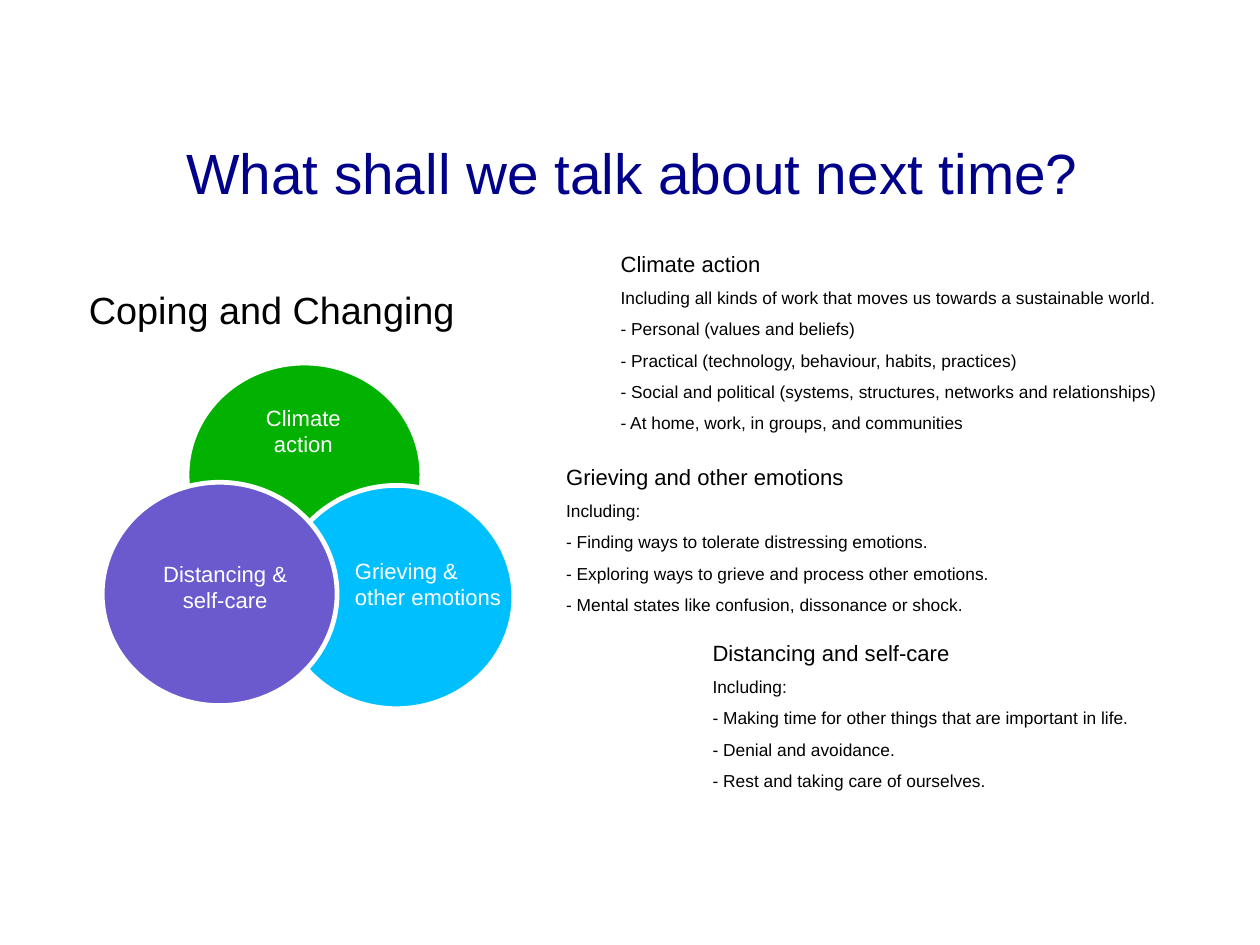
from pptx import Presentation
from pptx.dml.color import RGBColor as Rgb
from pptx.enum.shapes import MSO_SHAPE as Kind
from pptx.enum.text import PP_ALIGN as Align
from pptx.util import Cm, Pt

HUES = {"green": "03B200", "sky": "00BFFF", "violet": "6A5ACD",
        "white": "FFFFFF", "black": "000000", "navy": "00008B"}
FONT = "Arial"
HEAD, BODY = 14, 11
DISC = (5.26, 5.0)

# Discs from back to front: left, top, colour
DISCS = [(4.19, 8.13, "green"), (6.25, 10.87, "sky"), (2.29, 10.8, "violet")]

# Disc labels: text, box, alignment
LABELS = [
    ("Climate action", (5.36, 9.09, 2.84, 1.32), Align.CENTER),
    ("Grieving & other emotions", (7.92, 12.52, 3.51, 1.27), Align.LEFT),
    ("Distancing & self-care", (3.15, 12.57, 3.76, 1.27), Align.CENTER),
]

# Topic notes: box, then heading and lines
NOTES = [
    ((13.87, 5.64, 12.6, 4.09), [
        "Climate action",
        "Including all kinds of work that moves us towards a sustainable world.",
        "- Personal (values and beliefs)",
        "- Practical (technology, behaviour, habits, practices)",
        "- Social and political (systems, structures, networks and relationships)",
        "- At home, work, in groups, and communities"]),
    ((12.65, 10.41, 11.13, 3.4), [
        "Grieving and other emotions",
        "Including:",
        "- Finding ways to tolerate distressing emotions.",
        "- Exploring ways to grieve and process other emotions.",
        "- Mental states like confusion, dissonance or shock."]),
    ((15.93, 14.35, 11.13, 3.4), [
        "Distancing and self-care",
        "Including:",
        "- Making time for other things that are important in life.",
        "- Denial and avoidance.",
        "- Rest and taking care of ourselves."]),
]

# Titles: text, box, size, colour
TITLES = [
    ("What shall we talk about next time?", (4.14, 3.17, 20.4, 1.5), 36, "navy"),
    ("Coping and Changing", (1.96, 6.48, 8.6, 1.02), 24, "black"),
]


def hue(name):
    return Rgb.from_string(HUES[name])


def add_disc(slide, left, top, name):
    disc = slide.shapes.add_shape(
        Kind.OVAL, *map(Cm, (left, top, *DISC)))
    disc.shadow.inherit = False
    disc.fill.solid()
    disc.fill.fore_color.rgb = hue(name)
    disc.line.color.rgb = hue("white")
    disc.line.width = Pt(3)


def add_text(slide, box, lines, size, name, align=Align.LEFT):
    """Write the first line at the given size and the rest as body text."""
    frame = slide.shapes.add_textbox(*map(Cm, box)).text_frame
    frame.word_wrap = True
    frame.margin_left = Cm(0.03)
    frame.margin_top = frame.margin_right = frame.margin_bottom = 0
    for i, line in enumerate(lines):
        para = frame.add_paragraph() if i else frame.paragraphs[0]
        para.text = line
        para.alignment = align
        para.line_spacing = 0.98
        para.space_before = Pt(6.8 if i else 0)
        para.font.name = FONT
        para.font.size = Pt(BODY if i else size)
        para.font.color.rgb = hue(name)


def main():
    deck = Presentation()
    deck.slide_width, deck.slide_height = Cm(28.22), Cm(21.16)
    slide = deck.slides.add_slide(deck.slide_layouts[6])

    # Overlapping discs and their labels
    for disc in DISCS:
        add_disc(slide, *disc)
    for text, box, align in LABELS:
        add_text(slide, box, [text], HEAD, "white", align)

    # Topic notes
    for box, lines in NOTES:
        add_text(slide, box, lines, HEAD, "black")

    # Titles
    for text, box, size, name in TITLES:
        add_text(slide, box, [text], size, name)

    deck.save("out.pptx")


if __name__ == "__main__":
    main()
